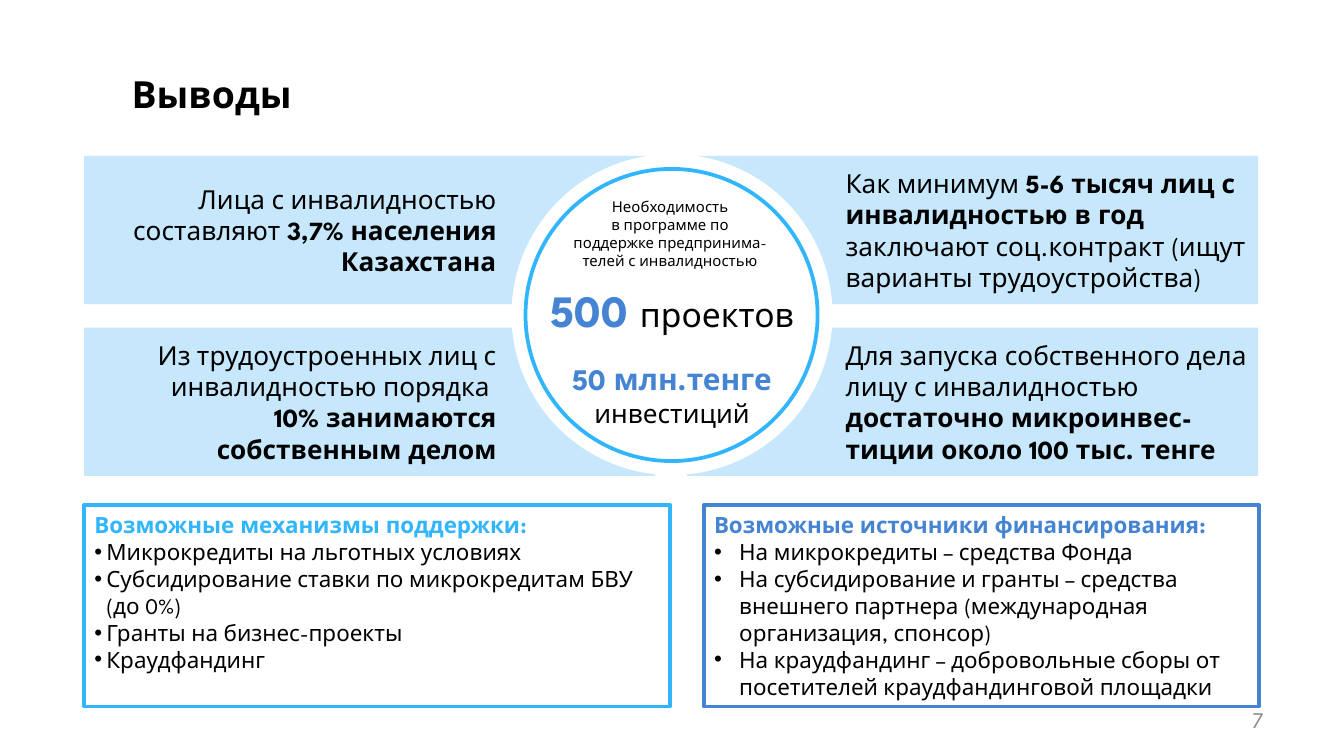
from dataclasses import dataclass

from lxml.etree import SubElement
from pptx import Presentation
from pptx.dml.color import RGBColor
from pptx.enum.shapes import MSO_SHAPE as Shp
from pptx.enum.text import MSO_ANCHOR as Anchor, PP_ALIGN as Align
from pptx.oxml.ns import qn
from pptx.util import Emu, Pt

SCALE = 6350  # EMU per px, 144 px to the inch
FONT = "League Spartan"
BLACK = RGBColor(0x00, 0x00, 0x00)
WHITE = RGBColor(0xFF, 0xFF, 0xFF)
GRAY = RGBColor(0x8C, 0x8C, 0x8C)
PALE = RGBColor(0xC6, 0xE7, 0xFC)
SKY = RGBColor(0x31, 0xB6, 0xFD)
BLUE = RGBColor(0x45, 0x84, 0xD3)


@dataclass
class Run:
    text: str
    size: int
    bold: bool = False
    color: RGBColor = BLACK


@dataclass
class Para:
    runs: list[Run]
    align: Align = Align.LEFT
    indent: int = 0  # hanging bullet indent, 0 for no bullet


@dataclass
class Box:
    left: int
    top: int
    width: int
    height: int


@dataclass
class Band:
    box: Box
    insets: tuple[int, int, int, int]
    para: Para


@dataclass
class Card:
    box: Box
    color: RGBColor
    title: str
    indent: int
    items: list[str]


def px(n: int) -> Emu:
    return Emu(n * SCALE)


def place(box: Box) -> list[Emu]:
    return [px(n) for n in (box.left, box.top, box.width, box.height)]


def write(sp, paras: list[Para], insets=(14, 7, 14, 7), anchor=Anchor.TOP, wrap=True) -> None:
    tf = sp.text_frame
    tf.word_wrap = wrap
    tf.vertical_anchor = anchor
    tf.margin_left, tf.margin_top, tf.margin_right, tf.margin_bottom = map(px, insets)
    for i, para in enumerate(paras):
        p = tf.add_paragraph() if i else tf.paragraphs[0]
        p.alignment = para.align
        if para.indent:
            pPr = p._p.get_or_add_pPr()
            pPr.set("marL", str(px(para.indent)))
            pPr.set("indent", str(-px(para.indent)))
            SubElement(pPr, qn("a:buFont")).set("typeface", "Arial")
            SubElement(pPr, qn("a:buChar")).set("char", "•")
        for run in para.runs:
            if run.text == "\n":
                p.add_line_break()
                continue
            r = p.add_run()
            r.text = run.text
            r.font.name = FONT
            r.font.size = Pt(run.size)
            r.font.bold = run.bold
            r.font.color.rgb = run.color


def add_shape(s, kind: Shp, box: Box, fill: RGBColor, line: RGBColor | None = None):
    sp = s.shapes.add_shape(kind, *place(box))
    sp.shadow.inherit = False
    sp.fill.solid()
    sp.fill.fore_color.rgb = fill
    if line is None:
        sp.line.fill.background()
    else:
        sp.line.color.rgb = line
        sp.line.width = Pt(2)
    return sp


def add_text(s, box: Box, paras: list[Para], **layout) -> None:
    write(s.shapes.add_textbox(*place(box)), paras, **layout)


def add_band(s, band: Band) -> None:
    sp = add_shape(s, Shp.RECTANGLE, band.box, PALE)
    write(sp, [band.para], band.insets, Anchor.MIDDLE)


def add_card(s, card: Card) -> None:
    sp = add_shape(s, Shp.RECTANGLE, card.box, WHITE, card.color)
    paras = [Para([Run(card.title, 12, True, card.color)])]
    paras += [Para([Run(item, 12)], indent=card.indent) for item in card.items]
    write(sp, paras, (11, 7, 5, 7))


# Fact bands: two columns by two rows
LEFT_INSETS, RIGHT_INSETS = (11, 7, 170, 7), (170, 7, 5, 7)
COLUMNS = [(90, LEFT_INSETS, Align.RIGHT), (736, RIGHT_INSETS, Align.LEFT)]
ROWS = [167, 351]
FACTS = [
    [
        [Run("Лица с инвалидностью составляют ", 14),
         Run("3,7% населения Казахстана", 14, True)],
        [Run("Из трудоустроенных лиц с инвалидностью порядка ", 14), Run("\n", 14),
         Run("10% занимаются собственным делом", 14, True)],
    ],
    [
        [Run("Как минимум ", 14),
         Run("5-6 тысяч лиц с инвалидностью в год ", 14, True),
         Run("заключают соц.контракт (ищут варианты трудоустройства)", 14)],
        [Run("Для запуска собственного дела лицу с инвалидностью ", 14),
         Run("достаточно микроинвес-тиции около 100 тыс. тенге", 14, True)],
    ],
]
BANDS = [
    Band(Box(left, top, 612, 159), insets, Para(runs, align))
    for (left, insets, align), column in zip(COLUMNS, FACTS)
    for top, runs in zip(ROWS, column)
]

CARDS = [
    Card(Box(90, 541, 628, 216), SKY, "Возможные механизмы поддержки:", 13, [
        "Микрокредиты на льготных условиях",
        "Субсидирование ставки по микрокредитам БВУ (до 0%)",
        "Гранты на бизнес-проекты",
        "Краудфандинг",
    ]),
    Card(Box(754, 541, 595, 216), BLUE, "Возможные источники финансирования:", 27, [
        "На микрокредиты – средства Фонда",
        "На субсидирование и гранты – средства внешнего партнера "
        "(международная организация, спонсор)",
        "На краудфандинг – добровольные сборы от посетителей краудфандинговой площадки",
    ]),
]

NEED = ["Необходимость", "в программе по", "поддержке предпринима-телей с инвалидностью"]


def main() -> None:
    prs = Presentation()
    prs.slide_width, prs.slide_height = px(1440), px(810)
    s = prs.slides.add_slide(prs.slide_layouts[6])

    for band in BANDS:
        add_band(s, band)

    # White rim of the central circle
    add_shape(s, Shp.OVAL, Box(550, 167, 340, 340), WHITE, WHITE)

    # Title and page number
    add_text(s, Box(127, 33, 740, 135), [Para([Run("Выводы", 20, True)])], anchor=Anchor.MIDDLE)
    add_text(s, Box(1032, 750, 336, 43), [Para([Run("7", 12, color=GRAY)], Align.RIGHT)],
             anchor=Anchor.MIDDLE)

    # Central circle with its figures
    add_shape(s, Shp.OVAL, Box(563, 181, 313, 313), WHITE, SKY)
    add_text(s, Box(600, 212, 236, 78),
             [Para([Run(line, 8)], Align.CENTER) for line in NEED], insets=(0, 0, 0, 0))
    add_text(s, Box(602, 387, 236, 72),
             [Para([Run("50 млн.тенге ", 16, True, BLUE), Run("инвестиций", 14)], Align.CENTER)],
             insets=(0, 0, 0, 0))
    add_text(s, Box(575, 296, 291, 72),
             [Para([Run("500 ", 24, True, BLUE), Run("проектов", 18)], Align.CENTER)],
             wrap=False)

    for card in CARDS:
        add_card(s, card)

    prs.save("out.pptx")


if __name__ == "__main__":
    main()
